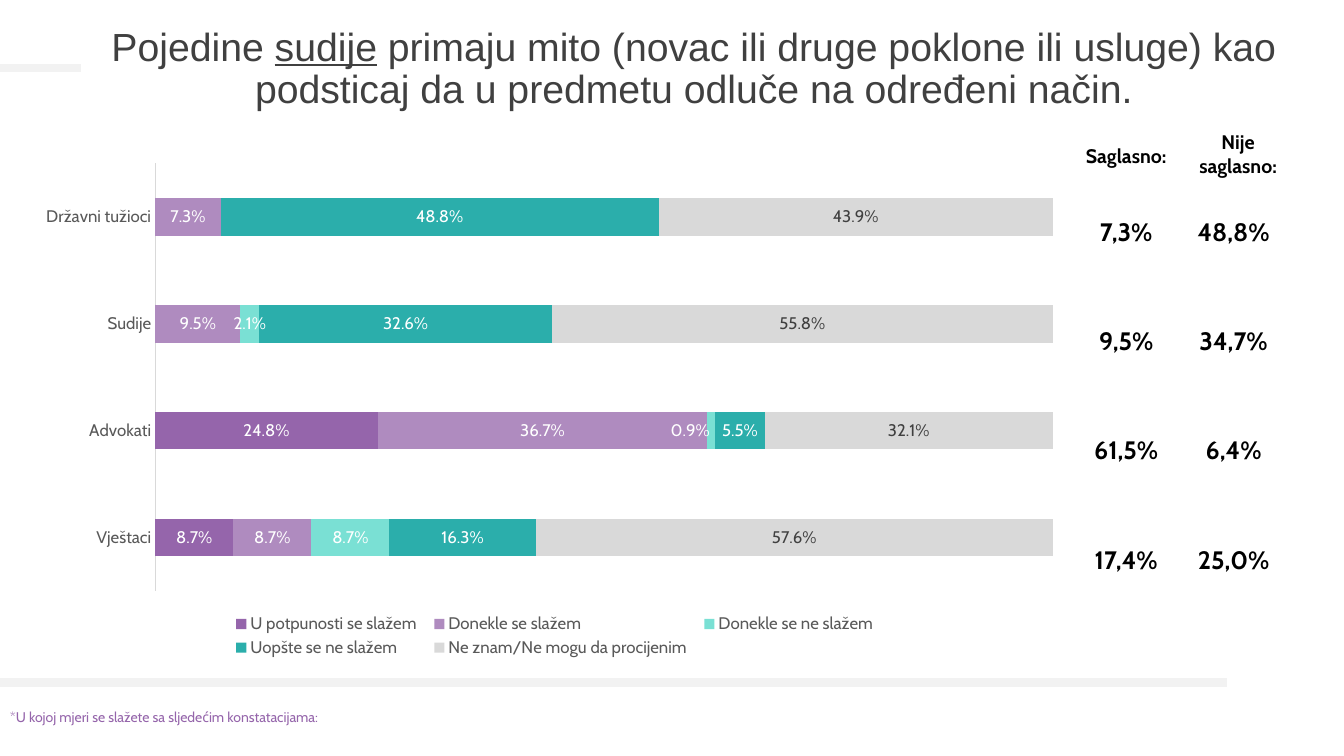
from dataclasses import dataclass

import pptx
import pptx.chart.data
import pptx.dml.color
import pptx.enum.chart
import pptx.enum.shapes
import pptx.enum.text
import pptx.oxml
import pptx.util
from pptx.oxml.ns import nsdecls, qn

Inches, Pt = pptx.util.Inches, pptx.util.Pt
ALIGN = pptx.enum.text.PP_ALIGN
ANCHOR = pptx.enum.text.MSO_ANCHOR
WIDTH, HEIGHT = 13.33, 7.5


@dataclass(frozen=True)
class Theme:
    title_font: str = "Arial"
    body_font: str = "Cabin"
    title: int = 28
    total: int = 18
    heading: int = 14
    chart: int = 12
    note: int = 10
    black: str = "000000"
    white: str = "FFFFFF"
    dark: str = "404040"
    grey: str = "595959"
    axis: str = "D9D9D9"
    rule: str = "F2F2F2"
    purple: str = "9565AB"
    lilac: str = "AF8BBF"
    mint: str = "7AE0D4"
    teal: str = "2BAEAB"


THEME = Theme()
GROUPS = ["Državni tužioci", "Sudije", "Advokati", "Vještaci"]
ANSWERS = [
    ("U potpunosti se slažem", (0, 0, 0.248, 0.087), THEME.purple, THEME.white),
    ("Donekle se slažem", (0.073, 0.095, 0.367, 0.087), THEME.lilac, THEME.white),
    ("Donekle se ne slažem", (0, 0.021, 0.009, 0.087), THEME.mint, THEME.white),
    ("Uopšte se ne slažem", (0.488, 0.326, 0.055, 0.163), THEME.teal, THEME.white),
    ("Ne znam/Ne mogu da procijenim", (0.439, 0.558, 0.321, 0.576), THEME.axis, THEME.dark),
]
TOTALS = [("7,3%", "48,8%"), ("9,5%", "34,7%"), ("61,5%", "6,4%"), ("17,4%", "25,0%")]
PERCENT = "0.0%"
PERCENT_NO_ZERO = "0.0%;;"


def rgb(color):
    return pptx.dml.color.RGBColor.from_string(color)


def set_font(font, size, color, name=THEME.body_font, bold=False):
    font.size, font.name, font.bold = Pt(size), name, bold
    font.color.rgb = rgb(color)


def write(frame, text, size, color, align=ALIGN.LEFT, bold=False):
    frame.word_wrap = True
    frame.text = text
    para = frame.paragraphs[0]
    para.alignment = align
    set_font(para.runs[0].font, size, color, bold=bold)


def add_title(page, parts):
    """Fill the title from (text, underlined) parts."""
    title = page.shapes.title
    title.left, title.top = Inches(0.06 * WIDTH), Inches(0.25)
    title.width, title.height = Inches(12.16), Inches(0.88)
    frame = title.text_frame
    frame.vertical_anchor = ANCHOR.MIDDLE
    frame.auto_size = pptx.enum.text.MSO_AUTO_SIZE.NONE
    para = frame.paragraphs[0]
    para.alignment, para.line_spacing = ALIGN.CENTER, 0.9
    for text, underlined in parts:
        span = para.add_run()
        span.text = text
        set_font(span.font, THEME.title, THEME.dark, THEME.title_font)
        span.font.underline = underlined


def add_rule(page, top, right):
    rule = page.shapes.add_connector(
        pptx.enum.shapes.MSO_CONNECTOR.STRAIGHT, 0, Inches(top), Inches(right), Inches(top))
    rule.line.color.rgb = rgb(THEME.rule)
    rule.line.width = Pt(6)
    rule._element.spPr.append(pptx.oxml.parse_xml(f"<a:effectLst {nsdecls('a')}/>"))


def add_text(page, text, left, top, width, height, *style):
    box = page.shapes.add_textbox(Inches(left), Inches(top), Inches(width), Inches(height))
    write(box.text_frame, text, *style)


def add_totals(page):
    frame = page.shapes.add_table(
        len(TOTALS), 2, Inches(10.61), Inches(1.38), Inches(2.13), Inches(4.33))
    table = frame.table
    table.first_row = table.horz_banding = False
    for column, width in zip(table.columns, (1.12, 1.01)):
        column.width = Inches(width)
    for row, values in zip(table.rows, TOTALS):
        for cell, value in zip(row.cells, values):
            cell.fill.background()
            cell.margin_left = cell.margin_right = cell.margin_top = Inches(0.01)
            cell.margin_bottom = 0
            cell.vertical_anchor = ANCHOR.BOTTOM
            write(cell.text_frame, value, THEME.total, THEME.black, ALIGN.CENTER, True)


def manual_layout(**places):
    """Build a chart layout from shares of the chart's size."""
    modes = "".join(f'<c:{axis}Mode val="edge"/>' for axis in "xy" if "w" in places)
    target = '<c:layoutTarget val="inner"/>' if places.pop("inner", False) else ""
    values = "".join(f'<c:{key} val="{value}"/>' for key, value in places.items())
    return pptx.oxml.parse_xml(
        f"<c:layout {nsdecls('c')}><c:manualLayout>{target}{modes}{values}"
        "</c:manualLayout></c:layout>")


def place_plot_and_legend(chart):
    area = chart._chartSpace.chart.plotArea
    for old in area.findall(qn("c:layout")):
        area.remove(old)
    area.insert(0, manual_layout(inner=True, x=0.124, y=0.01, w=0.856, h=0.842))
    position = chart.legend._element.find(qn("c:legendPos"))
    for old in chart.legend._element.findall(qn("c:layout")):
        chart.legend._element.remove(old)
    position.addnext(manual_layout(x=0.19, y=0.89, w=0.63, h=0.1))


def format_axes(chart):
    groups, shares = chart.category_axis, chart.value_axis
    groups.reverse_order = True
    groups.major_tick_mark = groups.minor_tick_mark = pptx.enum.chart.XL_TICK_MARK.NONE
    groups.format.line.color.rgb = rgb(THEME.axis)
    groups.format.line.width = Pt(0.75)
    set_font(groups.tick_labels.font, THEME.chart, THEME.grey)
    shares.has_major_gridlines = False
    shares.visible = False
    shares.tick_labels.number_format = PERCENT
    shares.tick_labels.number_format_is_linked = False


def format_series(series, color, label_color):
    series.format.fill.solid()
    series.format.fill.fore_color.rgb = rgb(color)
    labels = series.data_labels
    labels.show_value = True
    labels.number_format, labels.number_format_is_linked = PERCENT_NO_ZERO, False
    labels.position = pptx.enum.chart.XL_LABEL_POSITION.CENTER
    set_font(labels.font, THEME.chart, label_color)


def shift_label(series, index, share):
    label = series.points[index].data_label
    set_font(label.font, THEME.chart, THEME.white)
    label.position = pptx.enum.chart.XL_LABEL_POSITION.CENTER
    element = series.data_labels._element.find(qn("c:dLbl"))
    element.find(qn("c:idx")).addnext(manual_layout(x=share, y=0))


def add_answers_chart(page):
    data = pptx.chart.data.CategoryChartData(number_format=PERCENT)
    data.categories = GROUPS
    for name, values, _, _ in ANSWERS:
        data.add_series(name, values)
    chart = page.shapes.add_chart(
        pptx.enum.chart.XL_CHART_TYPE.BAR_STACKED_100,
        Inches(0.25), Inches(1.57), Inches(10.4), Inches(5.04), data).chart
    set_font(chart.font, THEME.chart, THEME.black)
    chart.has_title = False
    chart.has_legend = True
    chart.legend.position = pptx.enum.chart.XL_LEGEND_POSITION.BOTTOM
    chart.legend.include_in_layout = False
    set_font(chart.legend.font, THEME.chart, THEME.grey)
    plot = chart.plots[0]
    plot.gap_width, plot.overlap, plot.vary_by_categories = 182, 100, False
    for series, (_, _, color, label_color) in zip(plot.series, ANSWERS):
        format_series(series, color, label_color)
    shift_label(plot.series[2], 2, -0.02)
    format_axes(chart)
    place_plot_and_legend(chart)


def main():
    deck = pptx.Presentation()
    deck.slide_width, deck.slide_height = Inches(WIDTH), Inches(HEIGHT)
    page = deck.slides.add_slide(deck.slide_layouts.get_by_name("Title Only"))
    add_rule(page, 0.09 * HEIGHT, 0.06 * WIDTH)
    add_title(page, [
        ("Pojedine ", False), ("sudije", True),
        (" primaju mito (novac ili druge poklone ili usluge) kao podsticaj da u "
         "predmetu odluče na određeni način.", False)])
    add_rule(page, 6.77, 12.17)
    add_text(page, "*U kojoj mjeri se slažete sa sljedećim konstatacijama:",
             0, 6.98, 11.39, 0.27, THEME.note, THEME.purple)
    add_totals(page)
    heading = (THEME.heading, THEME.black, ALIGN.CENTER, True)
    add_text(page, "Saglasno:", 10.59, 1.38, 1.16, 0.34, *heading)
    add_text(page, "Nije saglasno:", 11.7, 1.24, 1.16, 0.57, *heading)
    add_answers_chart(page)
    deck.save("out.pptx")


if __name__ == "__main__":
    main()
